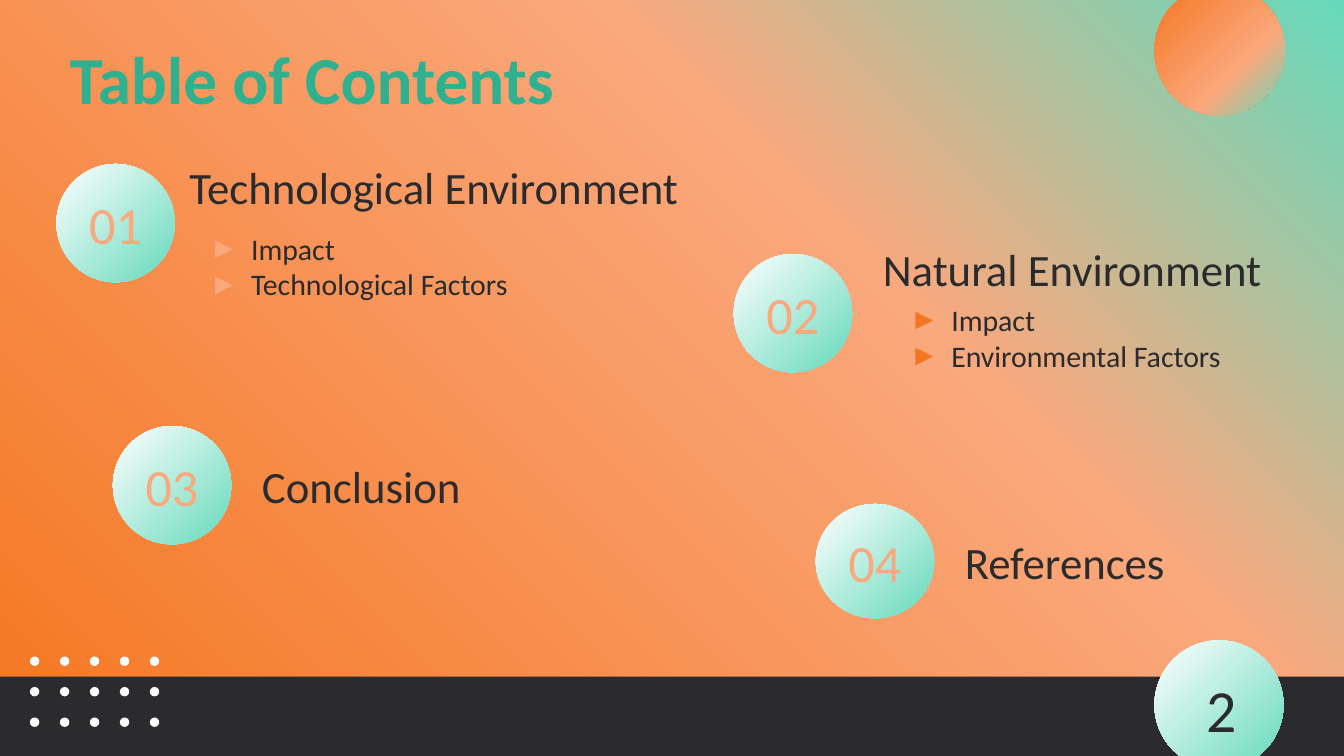
"""Build the table of contents slide of an environment report."""
from copy import deepcopy
from dataclasses import dataclass
from itertools import product

from lxml.etree import SubElement
from pptx import Presentation
from pptx.dml.color import RGBColor
from pptx.enum.shapes import MSO_SHAPE
from pptx.enum.text import MSO_ANCHOR, PP_ALIGN
from pptx.oxml.ns import qn
from pptx.util import Inches, Pt

WIDTH = Inches(10)
HEIGHT = WIDTH * 9 // 16
COLUMN = WIDTH // 100


@dataclass(frozen=True)
class Theme:
    font: str = "Calibri"
    dark: str = "2B2B2D"
    white: str = "FFFFFF"
    green: str = "2FB08F"
    mint: str = "66D9BC"
    peach: str = "FAA87D"
    orange: str = "F57620"
    title: int = 36
    page: int = 32
    number: int = 28
    heading: int = 24
    item: int = 16


THEME = Theme()
SUNSET = ((0, THEME.orange), (0.65, THEME.peach), (1, THEME.mint))
FRESH = ((0, THEME.white), (1, THEME.mint))

ENTRIES = (
    ("01", (4.2, 12.2, 8.8, 8.8), "Technological Environment", (13.1, 11.8, 43.8, 4.1),
     ("Impact", "Technological Factors"), (14.6, 16, 28.9, 7.6), THEME.peach),
    ("02", (54.6, 18.9, 8.8, 8.8), "Natural Environment", (64.7, 17.9, 34.9, 4.1),
     ("Impact", "Environmental Factors"), (66.7, 21.3, 28.9, 7.6), THEME.orange),
    ("03", (8.4, 31.7, 8.8, 8.8), "Conclusion", (18.5, 34.1, 28.9, 4.1), (), None, None),
    ("04", (60.7, 37.5, 8.8, 8.5), "References", (70.8, 39.7, 28.9, 4.1), (), None, None),
)


def on_grid(area):
    return [round(cells * COLUMN) for cells in area]


def paint_gradient(fill, owner, stops, angle):
    fill.gradient()
    stop_list = owner.find(".//" + qn("a:gsLst"))
    while len(stop_list) < len(stops):
        stop_list.append(deepcopy(stop_list[0]))
    for stop, (position, color) in zip(fill.gradient_stops, stops):
        stop.position = position
        stop.color.rgb = RGBColor.from_string(color)
    fill.gradient_angle = angle


def add_figure(slide, kind, area, color=None, stops=None):
    figure = slide.shapes.add_shape(kind, *on_grid(area))
    figure.shadow.inherit = False
    figure.line.fill.background()
    if stops:
        paint_gradient(figure.fill, figure.element, stops, 315)
    else:
        figure.fill.solid()
        figure.fill.fore_color.rgb = RGBColor.from_string(color)


def add_bullet(paragraph, color):
    properties = paragraph._p.get_or_add_pPr()
    properties.set("marL", str(Inches(0.31)))
    properties.set("indent", str(-Inches(0.31)))
    bullet_color = SubElement(properties, qn("a:buClr"))
    SubElement(bullet_color, qn("a:srgbClr"), val=color)
    SubElement(properties, qn("a:buFont"), typeface="Arial")
    SubElement(properties, qn("a:buChar"), char="►")


def add_text(slide, area, *lines, size, color=THEME.dark, bold=False,
             align=PP_ALIGN.LEFT, anchor=MSO_ANCHOR.MIDDLE, bullet=None):
    frame = slide.shapes.add_textbox(*on_grid(area)).text_frame
    frame.word_wrap = True
    frame.vertical_anchor = anchor
    frame.margin_left = frame.margin_right = COLUMN
    frame.margin_top = frame.margin_bottom = COLUMN
    frame.text = "\n".join(lines)
    for paragraph in frame.paragraphs:
        paragraph.alignment = align
        if bullet:
            add_bullet(paragraph, bullet)
        font = paragraph.runs[0].font
        font.name, font.size, font.bold = THEME.font, Pt(size), bold
        font.color.rgb = RGBColor.from_string(color)


def add_decoration(slide):
    paint_gradient(slide.background.fill, slide.element, SUNSET, 45)
    add_figure(slide, MSO_SHAPE.RECTANGLE, (0, 50.35, 100, 5.9), THEME.dark)
    add_figure(slide, MSO_SHAPE.OVAL, (85.9, 47.65, 9.6, 9.6), stops=FRESH)
    add_figure(slide, MSO_SHAPE.OVAL, (85.9, -1.1, 9.7, 9.7), stops=SUNSET)
    for row, column in product(range(3), range(5)):
        dot = (2.23 + 2.23 * column, 48.85 + 2.27 * row, 0.7, 0.7)
        add_figure(slide, MSO_SHAPE.OVAL, dot, THEME.white)


def add_entry(slide, number, badge, heading, heading_area, items, items_area, bullet):
    left, top, width, height = badge
    add_figure(slide, MSO_SHAPE.OVAL, badge, stops=FRESH)
    add_text(slide, (left + 0.2, top + (height - 5.8) / 2, width - 0.4, 5.8), number,
             size=THEME.number, color=THEME.peach, align=PP_ALIGN.CENTER)
    add_text(slide, heading_area, heading, size=THEME.heading)
    if items:
        add_text(slide, items_area, *items, size=THEME.item, bullet=bullet)


def main():
    deck = Presentation()
    deck.slide_width, deck.slide_height = WIDTH, HEIGHT
    slide = deck.slides.add_slide(deck.slide_layouts[6])
    add_decoration(slide)
    add_text(slide, (4.2, 1.8, 71.1, 6.5), "Table of Contents", size=THEME.title,
             color=THEME.green, bold=True, anchor=MSO_ANCHOR.TOP)
    for entry in ENTRIES:
        add_entry(slide, *entry)
    add_text(slide, (86.7, 49.8, 8.4, 5.8), "2", size=THEME.page, align=PP_ALIGN.CENTER)
    deck.save("out.pptx")


if __name__ == "__main__":
    main()
